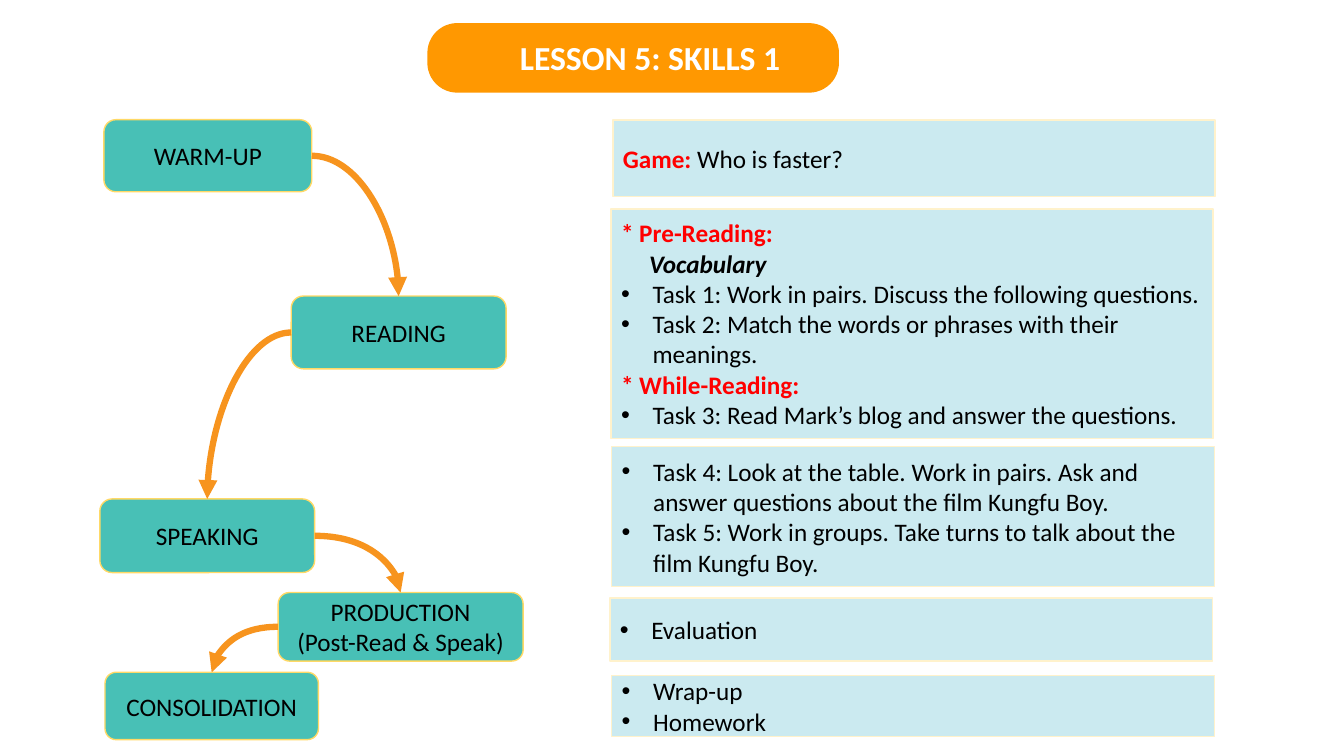
from dataclasses import dataclass
from itertools import pairwise

from lxml.etree import SubElement
from pptx import Presentation
from pptx.dml.color import RGBColor
from pptx.enum.shapes import MSO_CONNECTOR, MSO_SHAPE
from pptx.enum.text import MSO_ANCHOR, PP_ALIGN
from pptx.oxml.ns import qn
from pptx.util import Pt


@dataclass(frozen=True)
class Theme:
    font: str = "Calibri"
    body_size: float = 18
    title_size: float = 24
    text: str = "000000"
    heading: str = "FF0000"
    title_text: str = "FFFFFF"
    title_fill: str = "FF9801"
    step_fill: str = "48C0B6"
    step_line: str = "FFD966"
    panel_fill: str = "CBEAF0"
    panel_line: str = "FFF2CC"
    arrow: str = "F7941E"
    line_width: float = 1
    arrow_width: float = 4.5
    bullet_indent: float = 22.5
    plain_indent: float = 20


THEME = Theme()

# Lesson steps: label lines and box (left, top, width, height) in points
STEPS = [
    (["WARM-UP"], (74.2, 85.5, 148.5, 51.5)),
    (["READING"], (208, 211.5, 153.5, 52)),
    (["SPEAKING"], (71.3, 356.4, 153.5, 52.6)),
    (["PRODUCTION", "(Post-Read & Speak)"], (198.7, 423.2, 175, 49)),
    (["CONSOLIDATION"], (75, 480.2, 152.5, 48.2)),
]

# Run formats
PLAIN = {"bold": False, "italic": False}
HEADING = {"bold": True, "color": THEME.heading}
EMPHASIS = {"bold": True, "italic": True}


def line(text, style=PLAIN):
    return {"runs": [(text, style)]}


def bullet(text):
    return {"runs": [(text, PLAIN)], "indent": THEME.bullet_indent, "bullet": True}


# Activity panels: box and paragraphs
PANELS = [
    ((437.8, 85.7, 430, 54.7),
     [{"runs": [("Game: ", HEADING), ("Who is faster?", PLAIN)]}]),
    ((436.5, 149.2, 430, 164),
     [line("* Pre-Reading:", HEADING),
      {"runs": [("Vocabulary", EMPHASIS)], "indent": THEME.plain_indent},
      bullet("Task 1: Work in pairs. Discuss the following questions."),
      bullet("Task 2: Match the words or phrases with their meanings."),
      line("* While-Reading:", HEADING),
      bullet("Task 3: Read Mark’s blog and answer the questions.")]),
    ((437, 319, 430.5, 100),
     [bullet("Task 4: Look at the table. Work in pairs. Ask and answer "
             "questions about the film Kungfu Boy."),
      bullet("Task 5: Work in groups. Take turns to talk about the film Kungfu Boy.")]),
    ((435.6, 427, 430.5, 45.2), [bullet("Evaluation")]),
    ((437, 482.5, 430.5, 43.5), [bullet("Wrap-up"), bullet("Homework")]),
]


def add_box(slide, kind, box, fill, outline=None):
    shape = slide.shapes.add_shape(kind, *map(Pt, box))
    shape.shadow.inherit = False
    shape.fill.solid()
    shape.fill.fore_color.rgb = RGBColor.from_string(fill)
    if outline:
        shape.line.color.rgb = RGBColor.from_string(outline)
        shape.line.width = Pt(THEME.line_width)
    else:
        shape.line.fill.background()
    return shape


def add_run(paragraph, text, style):
    run = paragraph.add_run()
    run.text = text
    values = {"name": THEME.font, "size": Pt(THEME.body_size),
              "color": THEME.text} | style
    color = values.pop("color")
    for name, value in values.items():
        setattr(run.font, name, value)
    run.font.color.rgb = RGBColor.from_string(color)


def set_indent(paragraph, indent, bulleted):
    properties = paragraph._p.get_or_add_pPr()
    properties.set("marL", str(Pt(indent)))
    if bulleted:
        properties.set("indent", str(-Pt(indent)))
        SubElement(properties, qn("a:buFont"), typeface="Arial")
        SubElement(properties, qn("a:buChar"), char="•")


def write_paragraphs(shape, paragraphs, alignment=PP_ALIGN.LEFT,
                     anchor=MSO_ANCHOR.MIDDLE):
    frame = shape.text_frame
    frame.word_wrap = True
    frame.vertical_anchor = anchor
    for index, content in enumerate(paragraphs):
        paragraph = frame.add_paragraph() if index else frame.paragraphs[0]
        paragraph.alignment = alignment
        if "indent" in content:
            set_indent(paragraph, content["indent"], content.get("bullet", False))
        for text, style in content["runs"]:
            add_run(paragraph, text, style)


def add_title(slide, text):
    banner = add_box(slide, MSO_SHAPE.ROUNDED_RECTANGLE,
                     (305.3, 16.5, 294, 49.7), THEME.title_fill)
    banner.adjustments[0] = 0.43
    label = slide.shapes.add_textbox(Pt(364.3), Pt(23), Pt(227.5), Pt(36))
    style = {"bold": True, "size": Pt(THEME.title_size), "color": THEME.title_text}
    write_paragraphs(label, [line(text, style)], anchor=MSO_ANCHOR.TOP)


def add_step(slide, labels, box):
    step = add_box(slide, MSO_SHAPE.ROUNDED_RECTANGLE, box,
                   THEME.step_fill, THEME.step_line)
    write_paragraphs(step, [line(label) for label in labels], PP_ALIGN.CENTER)
    return step


def add_panel(slide, box, paragraphs):
    panel = add_box(slide, MSO_SHAPE.RECTANGLE, box,
                    THEME.panel_fill, THEME.panel_line)
    write_paragraphs(panel, paragraphs)


def add_curved_arrow(slide, source, target):
    """Leave the side of source that faces target and enter target from above."""
    connector = slide.shapes.add_connector(MSO_CONNECTOR.CURVE, 0, 0, 0, 0)
    connector.begin_connect(source, 3 if target.left > source.left else 1)
    connector.end_connect(target, 0)
    connector.line.color.rgb = RGBColor.from_string(THEME.arrow)
    connector.line.width = Pt(THEME.arrow_width)

    # Quarter curve, arrowhead and no shadow
    properties = connector.element.spPr
    properties.find(qn("a:prstGeom")).set("prst", "curvedConnector2")
    SubElement(properties.find(qn("a:ln")), qn("a:tailEnd"), type="triangle")
    SubElement(properties, qn("a:effectLst"))


def main():
    presentation = Presentation()
    presentation.slide_width, presentation.slide_height = Pt(960), Pt(540)
    slide = presentation.slides.add_slide(presentation.slide_layouts[6])

    # Step flow on the left
    steps = [add_step(slide, labels, box) for labels, box in STEPS]
    for source, target in pairwise(steps):
        add_curved_arrow(slide, source, target)

    # Activities on the right
    for box, paragraphs in PANELS:
        add_panel(slide, box, paragraphs)

    add_title(slide, "LESSON 5: SKILLS 1")
    presentation.save("out.pptx")


if __name__ == "__main__":
    main()
